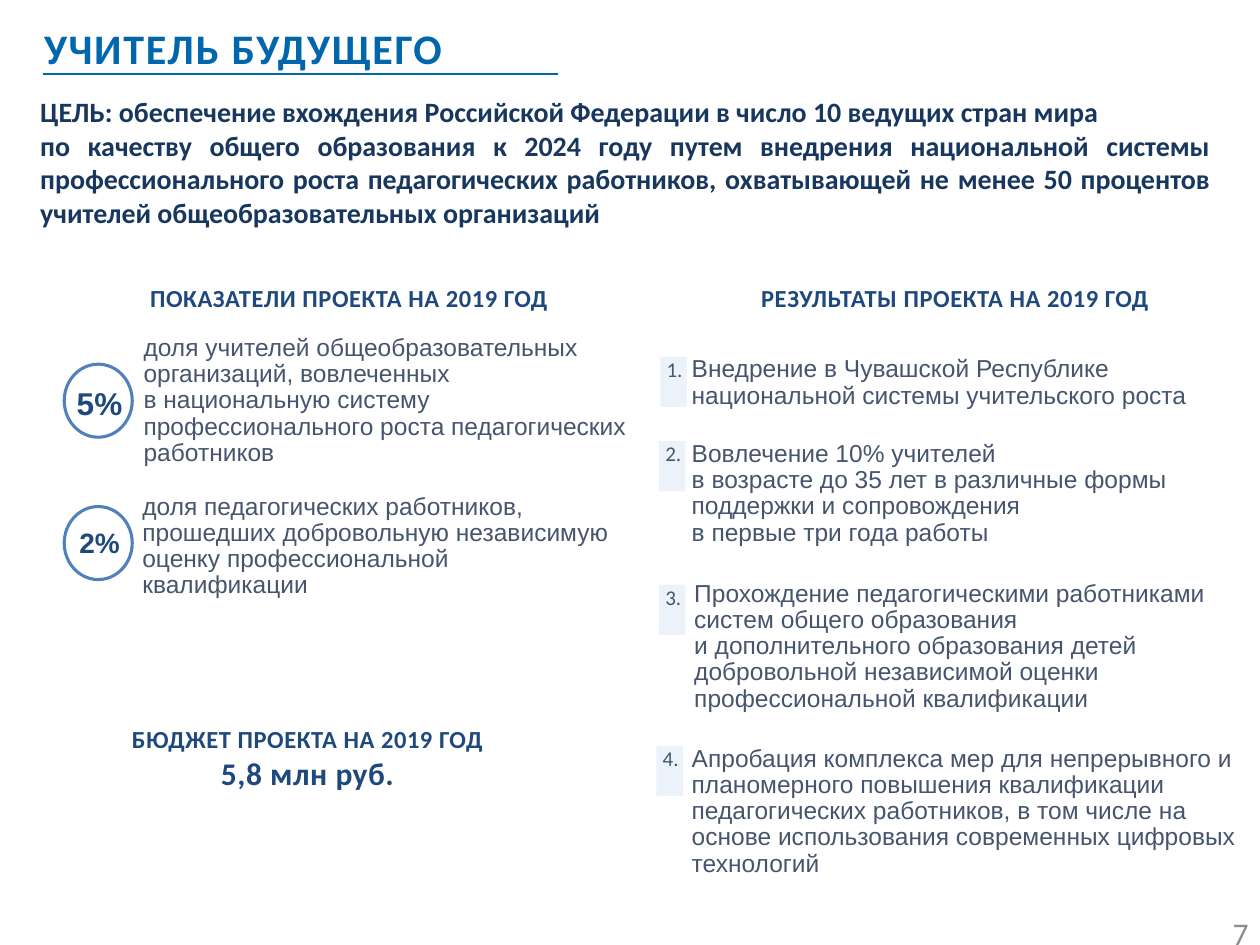
from pptx import Presentation
from pptx.dml.color import RGBColor
from pptx.enum.shapes import MSO_CONNECTOR, MSO_SHAPE
from pptx.enum.text import MSO_ANCHOR, MSO_AUTO_SIZE, PP_ALIGN as AL
from pptx.oxml.ns import qn
from pptx.util import Inches, Pt
from lxml import etree

COLORS = {
    "title": "0067AC", "goal": "17375E", "heading": "1F497D", "body": "46556D",
    "ring": "4F81BD", "badge": "ECF2FA", "page": "8C8C8C",
}


def color(name):
    return RGBColor.from_string(COLORS[name])


def write(sp, lines, sizes, font, ink, bold=False, align=AL.LEFT,
          spacing=0, leading=None, indent=0.01):
    """Fill a shape with one paragraph per line; sizes match the lines."""
    tf = sp.text_frame
    tf.word_wrap = True
    tf.vertical_anchor = MSO_ANCHOR.TOP
    tf.margin_left = tf.margin_right = tf.margin_top = tf.margin_bottom = 0
    tf.text = "\n".join(lines)
    for p, size in zip(tf.paragraphs, sizes):
        p.alignment = align
        p._p.get_or_add_pPr().set("marL", str(Inches(indent)))
        if leading:
            p.line_spacing = Pt(leading)
        p.font.name = font
        p.font.size = Pt(size)
        p.font.bold = bold
        p.font.color.rgb = color(ink)
        if spacing:
            p.font._element.set("spc", str(int(spacing * 100)))


prs = Presentation()
prs.slide_width, prs.slide_height = Inches(10), Inches(7.5)
s = prs.slides.add_slide(prs.slide_layouts[6])

# Title rule
rule = s.shapes.add_connector(MSO_CONNECTOR.STRAIGHT, Inches(0.34), Inches(0.59),
                              Inches(4.43), Inches(0.59))
rule.line.color.rgb = color("title")
rule.line.width = Pt(1)
etree.SubElement(rule._element.spPr, qn("a:effectLst"))

# Title, goal, column headings, budget and page number
heading = dict(font="Calibri", ink="heading", bold=True, align=AL.CENTER, spacing=0.3)
texts = [
    ((0.34, 0.18, 3.97, 0.4), ["УЧИТЕЛЬ БУДУЩЕГО"], [24],
     dict(font="Calibri", ink="title", bold=True, spacing=1)),
    ((0.31, 0.75, 9.3, 1.08),
     ["ЦЕЛЬ: обеспечение вхождения Российской Федерации в число 10 ведущих стран мира",
      "по качеству общего образования к 2024 году путем внедрения национальной системы "
      "профессионального роста педагогических работников, охватывающей не менее "
      "50 процентов учителей общеобразовательных организаций"], [16, 16],
     dict(font="Calibri", ink="goal", bold=True, align=AL.JUSTIFY)),
    ((0.67, 2.25, 4.19, 0.24), ["ПОКАЗАТЕЛИ ПРОЕКТА НА 2019 ГОД"], [14], heading),
    ((5.48, 2.25, 4.19, 0.24), ["РЕЗУЛЬТАТЫ ПРОЕКТА НА 2019 ГОД"], [14], heading),
    ((0.34, 5.75, 4.19, 0.54), ["БЮДЖЕТ ПРОЕКТА НА 2019 ГОД", "5,8 млн руб."],
     [14, 18], heading),
    ((8.76, 7.25, 1.15, 0.19), ["7"], [18],
     dict(font="Calibri", ink="page", align=AL.RIGHT, indent=0)),
]

# Indicators: ring top, value top, value, value size, description box, description
indicators = [
    (2.89, 3.05, "5%", 18, (1.13, 2.66, 3.87, 1.05),
     ["доля учителей общеобразовательных организаций, вовлеченных",
      "в национальную систему профессионального роста педагогических работников"]),
    (4.02, 4.17, "2%", 16, (1.12, 3.92, 3.78, 0.84),
     ["доля педагогических работников, прошедших добровольную независимую оценку "
      "профессиональной квалификации"]),
]
body = dict(font="Arial", ink="body", leading=15)
for ring_top, value_top, value, size, box, lines in indicators:
    ring = s.shapes.add_shape(MSO_SHAPE.OVAL, Inches(0.51), Inches(ring_top),
                              Inches(0.54), Inches(0.58))
    ring.shadow.inherit = False
    ring.fill.background()
    ring.line.color.rgb = color("ring")
    ring.line.width = Pt(1.75)
    texts.append(((0.52, value_top, 0.53, 0.3), [value], [size],
                  dict(font="Arial", ink="heading", bold=True, align=AL.CENTER)))
    texts.append((box, lines, [14] * len(lines), body))

# Results: badge left and top, description left, top and height, description
results = [
    (5.24, 2.83, 5.48, 2.83, 0.42,
     ["Внедрение в Чувашской Республике национальной системы учительского роста"]),
    (5.23, 3.5, 5.48, 3.5, 0.84,
     ["Вовлечение 10% учителей",
      "в возрасте до 35 лет в различные формы поддержки и сопровождения",
      "в первые три года работы"]),
    (5.23, 4.64, 5.5, 4.61, 1.05,
     ["Прохождение педагогическими работниками систем общего образования",
      "и дополнительного образования детей добровольной независимой оценки "
      "профессиональной квалификации"]),
    (5.21, 5.92, 5.48, 5.92, 1.05,
     ["Апробация комплекса мер для непрерывного и планомерного повышения квалификации "
      "педагогических работников, в том числе на основе использования современных "
      "цифровых технологий"]),
]
for number, (badge_x, badge_y, x, y, h, lines) in enumerate(results, 1):
    badge = s.shapes.add_shape(MSO_SHAPE.RECTANGLE, Inches(badge_x), Inches(badge_y),
                               Inches(0.21), Inches(0.4))
    badge.shadow.inherit = False
    badge.fill.solid()
    badge.fill.fore_color.rgb = color("badge")
    badge.line.fill.background()
    write(badge, [f"{number}."], [12], "Calibri", "body", indent=0.05)
    texts.append(((x, y, 4.42, h), lines, [14] * len(lines), body))

# Text boxes
for box, lines, sizes, style in texts:
    sp = s.shapes.add_textbox(*map(Inches, box))
    write(sp, lines, sizes, **style)
    sp.text_frame.auto_size = MSO_AUTO_SIZE.SHAPE_TO_FIT_TEXT

prs.save("out.pptx")
